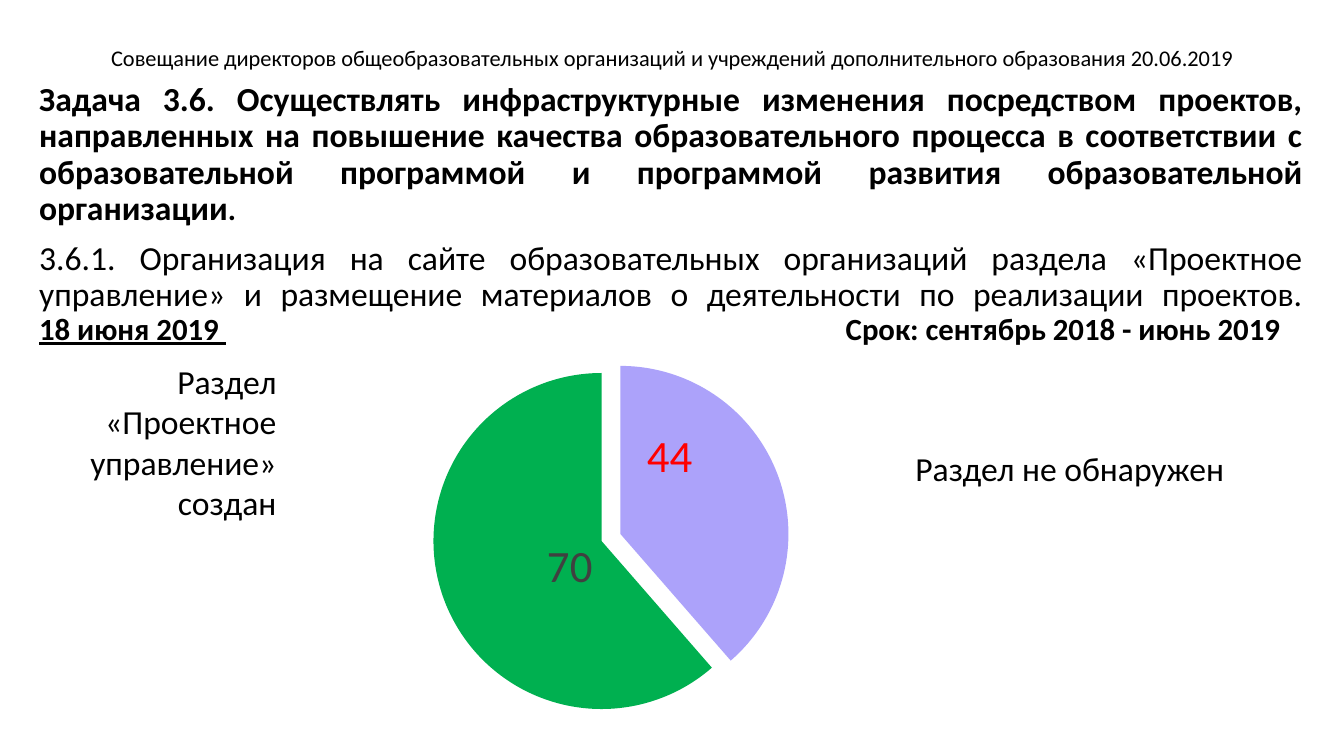
from dataclasses import dataclass

from lxml import etree
from pptx import Presentation
from pptx.chart.chart import Chart
from pptx.chart.data import CategoryChartData
from pptx.dml.color import RGBColor
from pptx.enum.chart import XL_CHART_TYPE, XL_LABEL_POSITION
from pptx.enum.text import MSO_ANCHOR, MSO_AUTO_SIZE, PP_ALIGN
from pptx.oxml import parse_xml
from pptx.oxml.ns import nsdecls, qn
from pptx.slide import Slide
from pptx.text.text import Font, _Paragraph
from pptx.util import Inches, Pt

PIE = XL_CHART_TYPE.PIE
LABEL_CENTER = XL_LABEL_POSITION.CENTER
TOP, MIDDLE = MSO_ANCHOR.TOP, MSO_ANCHOR.MIDDLE
GROW, FIXED = MSO_AUTO_SIZE.SHAPE_TO_FIT_TEXT, MSO_AUTO_SIZE.NONE
LEFT, CENTER, RIGHT, JUSTIFY = (
    PP_ALIGN.LEFT, PP_ALIGN.CENTER, PP_ALIGN.RIGHT, PP_ALIGN.JUSTIFY)

FONT = "Calibri"
COLORS = {"text": "000000", "missing": "ACA2FA", "created": "00B050",
          "missing_label": "FF0000", "created_label": "404040"}
DEADLINE_TAB = Inches(8)
EXPLOSION = 6


@dataclass(frozen=True)
class Piece:
    text: str
    size: float = 24
    bold: bool = False
    underline: bool = False


@dataclass(frozen=True)
class TextBlock:
    box: tuple[float, float, float, float]
    paragraphs: tuple[tuple[Piece, ...], ...]
    align: PP_ALIGN = LEFT
    anchor: MSO_ANCHOR = TOP
    auto_size: MSO_AUTO_SIZE = GROW
    line_spacing: float = 1.0
    space_before: float = 0


@dataclass(frozen=True)
class Slice:
    category: str
    schools: int
    fill: str
    label_color: str
    label_shift: tuple[float, float]


TEXT_BLOCKS = (
    TextBlock((0.92, 0.4, 11.5, 0.37), ((
        Piece("Совещание директоров общеобразовательных организаций и учреждений "
              "дополнительного образования 20.06.2019", 16),),),
        CENTER, MIDDLE, FIXED, 0.9),
    TextBlock((0.29, 0.77, 12.73, 6.33), (
        (Piece("Задача 3.6. Осуществлять инфраструктурные изменения посредством "
               "проектов, направленных на повышение качества образовательного "
               "процесса в соответствии с образовательной программой и программой "
               "развития образовательной организации", bold=True),
         Piece(".", 22, True)),
        (Piece("3.6.1. Организация на сайте образовательных организаций раздела "
               "«Проектное управление» и размещение материалов о деятельности "
               "по реализации проектов.\n"),
         Piece("18 июня 2019 ", 22, True, True),
         Piece("\tСрок: сентябрь 2018 - июнь 2019", 22, True))),
        JUSTIFY, TOP, FIXED, 0.9, 10),
    TextBlock((0, 3.53, 2.84, 1.72),
              ((Piece("Раздел «Проектное управление» создан"),),), RIGHT),
    TextBlock((8.98, 4.39, 3.69, 0.5), ((Piece("Раздел не обнаружен"),),)),
)
CHART_BOX = (3.14, 3.53, 5.84, 3.57)
SLICES = (
    Slice("1", 44, "missing", "missing_label", (-0.05, -0.13)),
    Slice("2", 70, "created", "created_label", (0.08, -0.01)),
)


def rgb(name: str) -> RGBColor:
    return RGBColor.from_string(COLORS[name])


def format_font(font: Font, color: str, **values: float | bool) -> None:
    for attribute, value in {"name": FONT, **values}.items():
        setattr(font, attribute, value)
    font.color.rgb = rgb(color)


def add_piece(paragraph: _Paragraph, piece: Piece) -> None:
    """Add a run, turning a closing newline into a line break."""
    run = paragraph.add_run()
    run.text = piece.text.rstrip("\n")
    format_font(run.font, "text", size=Pt(piece.size), bold=piece.bold,
                underline=piece.underline)
    if piece.text.endswith("\n"):
        paragraph.add_line_break()
    if "\t" in piece.text:
        stops = etree.SubElement(paragraph._p.get_or_add_pPr(), qn("a:tabLst"))
        etree.SubElement(stops, qn("a:tab"), pos=str(DEADLINE_TAB), algn="l")


def add_text(slide: Slide, block: TextBlock) -> None:
    frame = slide.shapes.add_textbox(*map(Inches, block.box)).text_frame
    frame.word_wrap = True
    frame.auto_size = block.auto_size
    frame.vertical_anchor = block.anchor
    paragraph_format = {"alignment": block.align,
                        "line_spacing": block.line_spacing,
                        "space_before": Pt(block.space_before)}
    for index, pieces in enumerate(block.paragraphs):
        paragraph = frame.add_paragraph() if index else frame.paragraphs[0]
        for attribute, value in paragraph_format.items():
            setattr(paragraph, attribute, value)
        for piece in pieces:
            add_piece(paragraph, piece)


def manual_layout(**values: str | float) -> etree._Element:
    """Build a chart layout from its settings, given in schema order."""
    settings = "".join(f'<c:{key} val="{value}"/>' for key, value in values.items())
    return parse_xml(f'<c:layout {nsdecls("c")}><c:manualLayout>{settings}'
                     '</c:manualLayout></c:layout>')


def arrange_pie(chart: Chart) -> None:
    """Pull the slices apart, fill the frame and shift the labels."""
    plot_area = chart.element.xpath(".//c:plotArea")[0]
    for layout in plot_area.findall(qn("c:layout")):
        plot_area.remove(layout)
    plot_area.insert(0, manual_layout(layoutTarget="inner", xMode="edge", yMode="edge",
                                      x=0, y=0.01, w=1, h=0.99))
    explosion = parse_xml(f'<c:explosion {nsdecls("c")} val="{EXPLOSION}"/>')
    plot_area.xpath(".//c:dPt")[0].addprevious(explosion)
    for part, label_index in zip(SLICES, plot_area.xpath(".//c:dLbl/c:idx")):
        x, y = part.label_shift
        label_index.addnext(manual_layout(x=x, y=y))


def add_pie(slide: Slide) -> None:
    data = CategoryChartData()
    data.categories = [part.category for part in SLICES]
    data.add_series("Series 1", [part.schools for part in SLICES])
    chart = slide.shapes.add_chart(PIE, *map(Inches, CHART_BOX), data).chart
    chart.has_legend = False
    chart.has_title = False
    format_font(chart.font, "text", size=Pt(10))
    plot = chart.plots[0]
    plot.vary_by_categories = True
    series = plot.series[0]
    series.data_labels.show_value = True
    for index, part in enumerate(SLICES):
        point = series.points[index]
        point.format.fill.solid()
        point.format.fill.fore_color.rgb = rgb(part.fill)
        format_font(point.data_label.font, part.label_color, size=Pt(32), bold=False)
        point.data_label.position = LABEL_CENTER
    arrange_pie(chart)


def main() -> None:
    presentation = Presentation()
    presentation.slide_width = Inches(13.33)
    presentation.slide_height = Inches(7.5)
    slide = presentation.slides.add_slide(presentation.slide_layouts[6])
    for block in TEXT_BLOCKS:
        add_text(slide, block)
    add_pie(slide)
    presentation.save("out.pptx")


if __name__ == "__main__":
    main()
